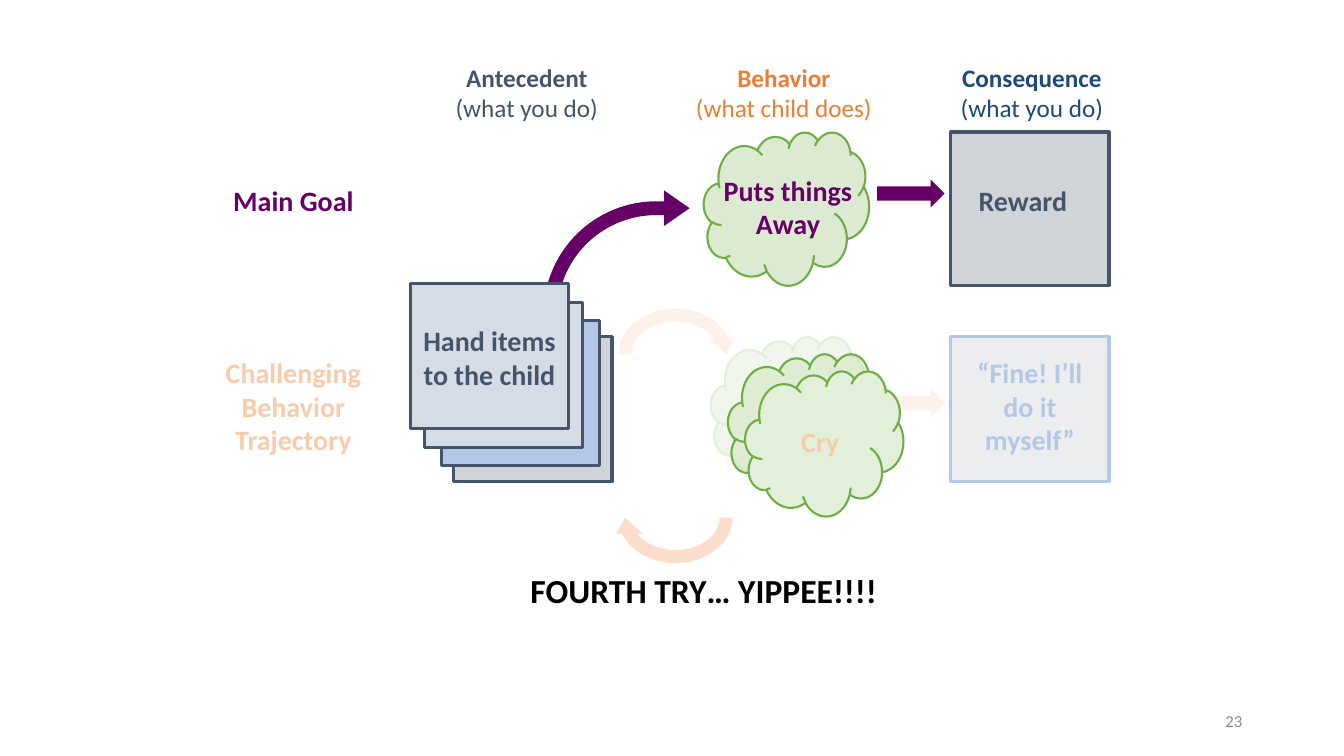
from lxml.etree import SubElement
from pptx import Presentation
from pptx.dml.color import RGBColor
from pptx.enum.shapes import MSO_SHAPE
from pptx.enum.text import MSO_ANCHOR, MSO_AUTO_SIZE, PP_ALIGN
from pptx.oxml.ns import qn
from pptx.util import Pt

PX = 9144  # EMU per px, 100 px to the inch

SLATE = RGBColor(0x44, 0x54, 0x6A)
PALE_SLATE = RGBColor(0xD6, 0xDC, 0xE5)
PALE_BLUE = RGBColor(0xB4, 0xC7, 0xE7)
NAVY = RGBColor(0x1F, 0x49, 0x7D)
GREEN = RGBColor(0x70, 0xAD, 0x47)
MID_GREEN = RGBColor(0xA9, 0xD1, 0x8E)
PALE_GREEN = RGBColor(0xE2, 0xF0, 0xD9)
ORANGE = RGBColor(0xED, 0x7D, 0x31)
PEACH = RGBColor(0xF8, 0xCB, 0xAD)
PURPLE = RGBColor(0x66, 0x00, 0x66)
BLACK = RGBColor(0, 0, 0)
GRAY = RGBColor(0x8C, 0x8C, 0x8C)


def emu(*sizes):
    return [size * PX for size in sizes]


def add_form(slide, kind, place, color, alpha=100, edge=None, weight=0):
    """Add a filled preset shape; alpha is the opacity in percent."""
    form = slide.shapes.add_shape(kind, *emu(*place))
    form.shadow.inherit = False
    form.fill.solid()
    form.fill.fore_color.rgb = color
    if alpha < 100:
        tint = form.fill._xPr.find(qn("a:solidFill"))[0]
        SubElement(tint, qn("a:alpha"), val=str(alpha * 1000))
    if edge is None:
        form.line.fill.background()
    else:
        form.line.color.rgb = edge
        form.line.width = Pt(weight)
    return form


def add_card(slide, place, color, alpha=100, edge=SLATE):
    add_form(slide, MSO_SHAPE.RECTANGLE, place, color, alpha, edge, 2.25)


def add_cloud(slide, place, color, alpha=100, edge=GREEN):
    add_form(slide, MSO_SHAPE.CLOUD, place, color, alpha, edge, 1.5)


def add_arrow(slide, top, color, alpha=100):
    add_form(slide, MSO_SHAPE.RIGHT_ARROW, (870, top, 67, 28), color, alpha)


def add_loop(slide, top, alpha, turn):
    loop = add_form(slide, MSO_SHAPE.CIRCULAR_ARROW,
                    (607, top, 126, 103), ORANGE, alpha)
    loop.rotation = turn


def add_label(slide, place, lines, color, size=20, align=PP_ALIGN.CENTER):
    """Add a text box whose first line is bold and the others are not."""
    box = slide.shapes.add_textbox(*emu(*place))
    frame = box.text_frame
    frame.word_wrap = True
    frame.auto_size = MSO_AUTO_SIZE.SHAPE_TO_FIT_TEXT
    frame.text = "\n".join(lines)
    for rank, para in enumerate(frame.paragraphs):
        para.alignment = align
        para.font.name = "Calibri"
        para.font.size = Pt(size)
        para.font.bold = rank == 0
        para.font.color.rgb = color
    return box


def add_heads(slide):
    for left, width, name, note, color in (
        (438, 169, "Antecedent", "(what you do)", SLATE),
        (674, 207, "Behavior", "(what child does)", ORANGE),
        (936, 175, "Consequence", "(what you do)", NAVY),
    ):
        add_label(slide, (left, 57, width, 71), (name, note), color, 18)


def add_goal(slide):
    add_label(slide, (204, 177, 174, 44), ["Main Goal"], PURPLE)
    add_cloud(slide, (698, 131, 164, 152), GREEN, 25)
    bend = add_form(slide, MSO_SHAPE.BENT_ARROW, (539, 189, 145, 128), PURPLE)
    for rank, value in enumerate((0.107, 0.137, 0.197, 0.875)):
        bend.adjustments[rank] = value
    add_label(slide, (694, 167, 175, 77), ["Puts things Away"], PURPLE)
    add_arrow(slide, 178, PURPLE)
    add_card(slide, (943, 131, 157, 152), SLATE, 25)
    add_label(slide, (936, 177, 157, 44), ["Reward"], SLATE)


def add_trials(slide):
    add_label(slide, (204, 348, 174, 111),
              ["Challenging Behavior Trajectory"], PEACH)
    add_loop(slide, 300, 10, 0)
    add_loop(slide, 462, 25, 180)
    add_arrow(slide, 386, ORANGE, 10)

    for left, top, color, alpha in (
        (450, 334, SLATE, 25),
        (438, 318, PALE_BLUE, 100),
        (421, 300, PALE_SLATE, 100),
        (407, 281, PALE_SLATE, 100),
    ):
        add_card(slide, (left, top, 157, 144), color, alpha)
    add_label(slide, (407, 316, 157, 77), ["Hand items to the child"], SLATE)

    for step, (color, alpha, edge) in enumerate((
        (GREEN, 10, PALE_GREEN),
        (MID_GREEN, 25, GREEN),
        (PALE_GREEN, 100, GREEN),
    )):
        place = (705 + 17 * step, 334 + 1 * step + 16 * step, 157, 144)
        add_cloud(slide, place, color, alpha, edge)
    add_label(slide, (735, 416, 157, 44), ["Cry"], PEACH)

    add_card(slide, (943, 334, 157, 144), SLATE, 10, PALE_BLUE)
    add_label(slide, (943, 348, 157, 111),
              ["“Fine! I’ll do it myself”"], PALE_BLUE)


def main():
    deck = Presentation()
    deck.slide_width, deck.slide_height = emu(1333, 750)
    slide = deck.slides.add_slide(deck.slide_layouts[6])
    add_heads(slide)
    add_goal(slide)
    add_trials(slide)
    add_label(slide, (350, 560, 696, 50), ["FOURTH TRY… YIPPEE!!!!"], BLACK, 24)
    number = add_label(slide, (942, 695, 300, 40), ["23"], GRAY, 12,
                       PP_ALIGN.RIGHT)
    number.text_frame.auto_size = MSO_AUTO_SIZE.NONE
    number.text_frame.vertical_anchor = MSO_ANCHOR.MIDDLE
    number.text_frame.paragraphs[0].font.bold = False
    deck.save("out.pptx")


if __name__ == "__main__":
    main()
